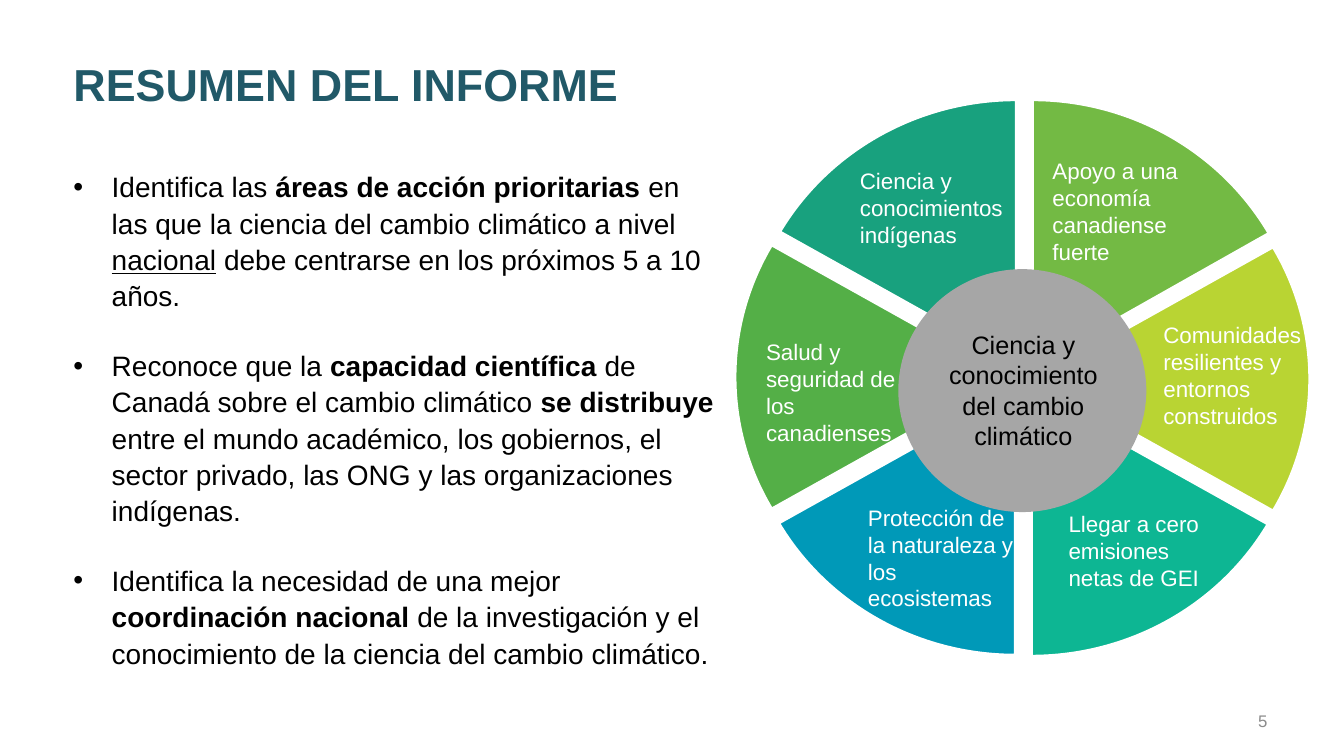
from dataclasses import dataclass
from math import cos, radians, sin, tan

from lxml.etree import SubElement
from pptx import Presentation
from pptx.dml.color import RGBColor
from pptx.enum.shapes import MSO_SHAPE
from pptx.enum.text import MSO_ANCHOR, PP_ALIGN
from pptx.oxml.ns import qn
from pptx.util import Inches, Pt

COLORS = {
    "title": "215968", "body": "000000", "page": "8C8C8C", "white": "FFFFFF",
    "hub": "A6A6A6", "economy": "73BA44", "communities": "B9D433",
    "emissions": "0DB693", "nature": "0099B8", "health": "54AF47",
    "indigenous": "18A17E",
}
FONT = "Arial"
RADIUS_X = 2.71
SECTOR_ANGLE = 60

Box = tuple[float, float, float, float]
Point = tuple[float, float]


@dataclass
class Sector:
    color: str
    apex: Point
    label: str
    label_box: Box
    radius_y: float = 2.62


@dataclass
class Part:
    text: str
    style: str = ""


# Clockwise from twelve o'clock
SECTORS = [
    Sector("economy", (10.24, 3.64), "Apoyo a una economía canadiense fuerte",
           (10.34, 1.51, 1.68, 1.18), 2.65),
    Sector("communities", (10.28, 3.76), "Comunidades resilientes y entornos construidos",
           (11.44, 3.14, 1.76, 1.18)),
    Sector("emissions", (10.23, 3.89), "Llegar a cero emisiones netas de GEI",
           (10.5, 5.01, 1.76, 0.91)),
    Sector("nature", (10.07, 3.88), "Protección de la naturaleza y los ecosistemas",
           (8.51, 4.95, 1.76, 1.18)),
    Sector("health", (10, 3.74), "Salud y seguridad de los canadienses",
           (7.5, 3.31, 1.76, 1.18)),
    Sector("indigenous", (10.08, 3.61), "Ciencia y conocimientos indígenas",
           (8.43, 1.61, 1.71, 0.91)),
]

FINDINGS = [
    [Part("Identifica las "), Part("áreas de acción prioritarias ", "bold"),
     Part("en las que la ciencia del cambio climático a nivel "),
     Part("nacional", "underline"),
     Part(" debe centrarse en los próximos 5 a 10 años.")],
    [Part("Reconoce que la "), Part("capacidad científica ", "bold"),
     Part("de Canadá sobre el cambio climático "), Part("se distribuye ", "bold"),
     Part("entre el mundo académico, los gobiernos, el sector privado, las ONG "
          "y las organizaciones indígenas.")],
    [Part("Identifica la necesidad de una mejor "), Part("coordinación nacional ", "bold"),
     Part("de la investigación y el conocimiento de la ciencia del cambio climático.")],
]


def rgb(name: str) -> RGBColor:
    return RGBColor.from_string(COLORS[name])


def add_frame(shapes, box: Box, anchor=MSO_ANCHOR.TOP):
    frame = shapes.add_textbox(*map(Inches, box)).text_frame
    frame.word_wrap = True
    frame.vertical_anchor = anchor
    return frame


def add_run(paragraph, part: Part, size: float, color: str) -> None:
    run = paragraph.add_run()
    run.text = part.text
    formats = {"name": FONT, "size": Pt(size)}
    if part.style:
        formats[part.style] = True
    for attribute, value in formats.items():
        setattr(run.font, attribute, value)
    run.font.color.rgb = rgb(color)


def add_text(shapes, box: Box, part: Part, size: float, color: str,
             align=PP_ALIGN.LEFT, anchor=MSO_ANCHOR.TOP) -> None:
    paragraph = add_frame(shapes, box, anchor).paragraphs[0]
    paragraph.alignment = align
    add_run(paragraph, part, size, color)


def add_findings(shapes, box: Box) -> None:
    frame = add_frame(shapes, box)
    for index, parts in enumerate(FINDINGS):
        paragraph = frame.add_paragraph() if index else frame.paragraphs[0]
        for attribute, value in {"line_spacing": 1.08, "space_after": Pt(24)}.items():
            setattr(paragraph, attribute, value)
        properties = paragraph._p.get_or_add_pPr()
        properties.set("marL", str(Inches(0.38)))
        properties.set("indent", str(-Inches(0.38)))
        SubElement(properties, qn("a:buFont"), typeface=FONT)
        SubElement(properties, qn("a:buChar"), char="•")
        for part in parts:
            add_run(paragraph, part, 20, "body")


def set_outline(wedge, box: Box, steps: list[tuple[str, list[Point]]]) -> None:
    """Give the wedge the whole ellipse as its frame and a curved outline inside it."""
    for attribute, value in zip(("left", "top", "width", "height"), box):
        setattr(wedge, attribute, Inches(value))
    outline = next(wedge._element.iter(qn("a:path")))
    for step in list(outline):
        outline.remove(step)
    outline.set("w", str(wedge.width))
    outline.set("h", str(wedge.height))
    for tag, points in steps:
        step = SubElement(outline, qn(tag))
        for x, y in points:
            SubElement(step, qn("a:pt"), x=str(Inches(x)), y=str(Inches(y)))


def add_sector(shapes, sector: Sector, start_angle: float) -> None:
    """Draw an elliptical wedge; angles run clockwise from twelve o'clock."""
    rx, ry = RADIUS_X, sector.radius_y
    x, y = sector.apex
    first, last = radians(start_angle), radians(start_angle + SECTOR_ANGLE)
    pull = 4 / 3 * tan((last - first) / 4)

    def rim(angle: float, along: float = 0) -> Point:
        """Point on the rim, moved along its tangent."""
        return (rx * (1 + sin(angle) + along * cos(angle)),
                ry * (1 - cos(angle) + along * sin(angle)))

    start, end, center = rim(first), rim(last), (rx, ry)
    builder = shapes.build_freeform(*map(Inches, start))
    builder.add_line_segments([tuple(map(Inches, p)) for p in (end, center)])
    wedge = builder.convert_to_shape()
    set_outline(wedge, (x - rx, y - ry, 2 * rx, 2 * ry), [
        ("a:moveTo", [start]),
        ("a:cubicBezTo", [rim(first, pull), rim(last, -pull), end]),
        ("a:lnTo", [center]),
        ("a:lnTo", [start]),
        ("a:close", []),
    ])
    wedge.shadow.inherit = False
    wedge.fill.solid()
    wedge.fill.fore_color.rgb = rgb(sector.color)
    wedge.line.color.rgb = rgb("white")
    wedge.line.width = Pt(2)


def add_wheel(shapes) -> None:
    for index, sector in enumerate(SECTORS):
        add_sector(shapes, sector, index * SECTOR_ANGLE)
    hub = shapes.add_shape(MSO_SHAPE.OVAL, *map(Inches, (8.91, 2.67, 2.46, 2.41)))
    hub.shadow.inherit = False
    hub.fill.solid()
    hub.fill.fore_color.rgb = rgb("hub")
    hub.line.fill.background()
    for sector in SECTORS:
        add_text(shapes, sector.label_box, Part(sector.label), 16, "white")
    add_text(shapes, (9.27, 3.22, 1.76, 1.31),
             Part("Ciencia y conocimiento del cambio climático"), 18, "body",
             PP_ALIGN.CENTER)


def main() -> None:
    presentation = Presentation()
    presentation.slide_width = Inches(13.33)
    presentation.slide_height = Inches(7.5)
    slide = presentation.slides.add_slide(presentation.slide_layouts[6])
    add_text(slide.shapes, (0.63, 0.32, 12, 1.01), Part("RESUMEN DEL INFORME", "bold"),
             32, "title", anchor=MSO_ANCHOR.MIDDLE)
    add_findings(slide.shapes, (0.63, 1.61, 6.6, 4.92))
    add_text(slide.shapes, (9.56, 6.95, 3.11, 0.4), Part("5"), 12, "page",
             PP_ALIGN.RIGHT, MSO_ANCHOR.MIDDLE)
    add_wheel(slide.shapes.add_group_shape().shapes)
    presentation.save("out.pptx")


if __name__ == "__main__":
    main()
